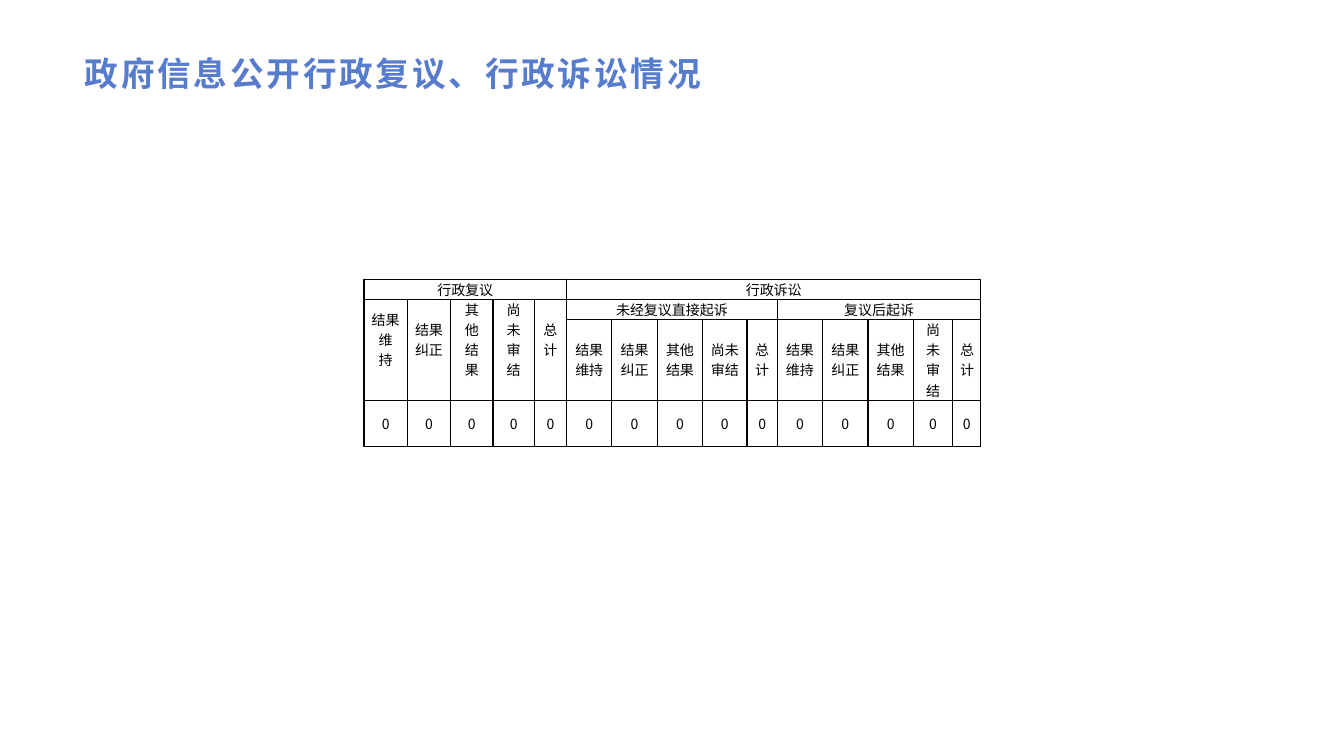
from lxml import etree
from pptx import Presentation
from pptx import util as u
from pptx.dml.color import RGBColor
from pptx.enum import text
from pptx.oxml import ns

COLORS = {"title": "577CCE", "text": "000000", "border": "080000"}
TITLE_FONT = "Arial"
TABLE_FONT = "Noto Sans CJK SC"

COLUMN_WIDTHS = [0.43, 0.43, 0.42, 0.41, 0.32,
                 0.45, 0.45, 0.45, 0.44, 0.3,
                 0.45, 0.45, 0.45, 0.39, 0.28]
ROW_HEIGHTS = [0.2, 0.2, 0.8, 0.46]
OUTCOMES = ["结果维持", "结果纠正", "其他结果", "尚未审结", "总计"]
REVIEW_OUTCOMES = ["结果\v维\v持"] + OUTCOMES[1:]
GROUP = len(OUTCOMES)


def style_font(font, name, size, color, bold=False):
    font.name = name
    font.size = u.Pt(size)
    font.bold = bold
    font.color.rgb = RGBColor.from_string(COLORS[color])


def add_title(slide, words):
    box = slide.shapes.add_textbox(u.Inches(0.73), u.Inches(0.48),
                                   u.Inches(11.87), u.Inches(0.48))
    frame = box.text_frame
    frame.word_wrap = True
    frame.vertical_anchor = text.MSO_ANCHOR.MIDDLE
    frame.margin_left, frame.margin_right = u.Inches(0.11), u.Inches(0.08)
    frame.margin_top = frame.margin_bottom = u.Inches(0.04)
    span = frame.paragraphs[0].add_run()
    span.text = words
    style_font(span.font, TITLE_FONT, 24, "title", bold=True)
    span.font._element.set("spc", "200")


def style_cell(cell):
    """Give the cell a thin border on all sides, no fill and tight margins."""
    properties = cell._tc.get_or_add_tcPr()
    for side in ("lnL", "lnR", "lnT", "lnB"):
        line = etree.SubElement(properties, ns.qn(f"a:{side}"), w=str(u.Pt(1)))
        fill = etree.SubElement(line, ns.qn("a:solidFill"))
        etree.SubElement(fill, ns.qn("a:srgbClr"), val=COLORS["border"])
    cell.fill.background()
    cell.vertical_anchor = text.MSO_ANCHOR.MIDDLE
    cell.margin_left = cell.margin_right = u.Pt(5.4)
    cell.margin_top = cell.margin_bottom = 0
    style_font(cell.text_frame.paragraphs[0].font, TABLE_FONT, 10, "text")


def write_cell(table, row, column, words, rows=1, columns=1):
    """Write centred words in a cell that spans the given rows and columns."""
    cell = table.cell(row, column)
    if rows * columns > 1:
        cell.merge(table.cell(row + rows - 1, column + columns - 1))
    cell.text = words
    para = cell.text_frame.paragraphs[0]
    para.alignment = text.PP_ALIGN.CENTER
    style_font(para.font, TABLE_FONT, 10, "text")
    return cell


def add_case_table(slide):
    frame = slide.shapes.add_table(
        len(ROW_HEIGHTS), len(COLUMN_WIDTHS), u.Inches(3.61), u.Inches(2.77),
        u.Inches(sum(COLUMN_WIDTHS)), u.Inches(sum(ROW_HEIGHTS)))
    table = frame.table
    table.first_row = table.horz_banding = False
    for column, width in zip(table.columns, COLUMN_WIDTHS):
        column.width = u.Inches(width)
    for row, height in zip(table.rows, ROW_HEIGHTS):
        row.height = u.Inches(height)
    for cell in table.iter_cells():
        style_cell(cell)

    write_cell(table, 0, 0, "行政复议", columns=GROUP)
    write_cell(table, 0, GROUP, "行政诉讼", columns=2 * GROUP)
    write_cell(table, 1, GROUP, "未经复议直接起诉", columns=GROUP)
    write_cell(table, 1, 2 * GROUP, "复议后起诉", columns=GROUP)
    for column, outcome in enumerate(REVIEW_OUTCOMES):
        cell = write_cell(table, 1, column, outcome, rows=2)
        cell.margin_bottom = u.Inches(0.2)
    for column, outcome in enumerate(OUTCOMES * 2, start=GROUP):
        write_cell(table, 2, column, outcome)
    for column in range(len(COLUMN_WIDTHS)):
        write_cell(table, 3, column, "0")


def main():
    deck = Presentation()
    deck.slide_width, deck.slide_height = u.Inches(13.33), u.Inches(7.5)
    slide = deck.slides.add_slide(deck.slide_layouts[6])
    add_title(slide, "政府信息公开行政复议、行政诉讼情况")
    add_case_table(slide)
    deck.save("out.pptx")


if __name__ == "__main__":
    main()
